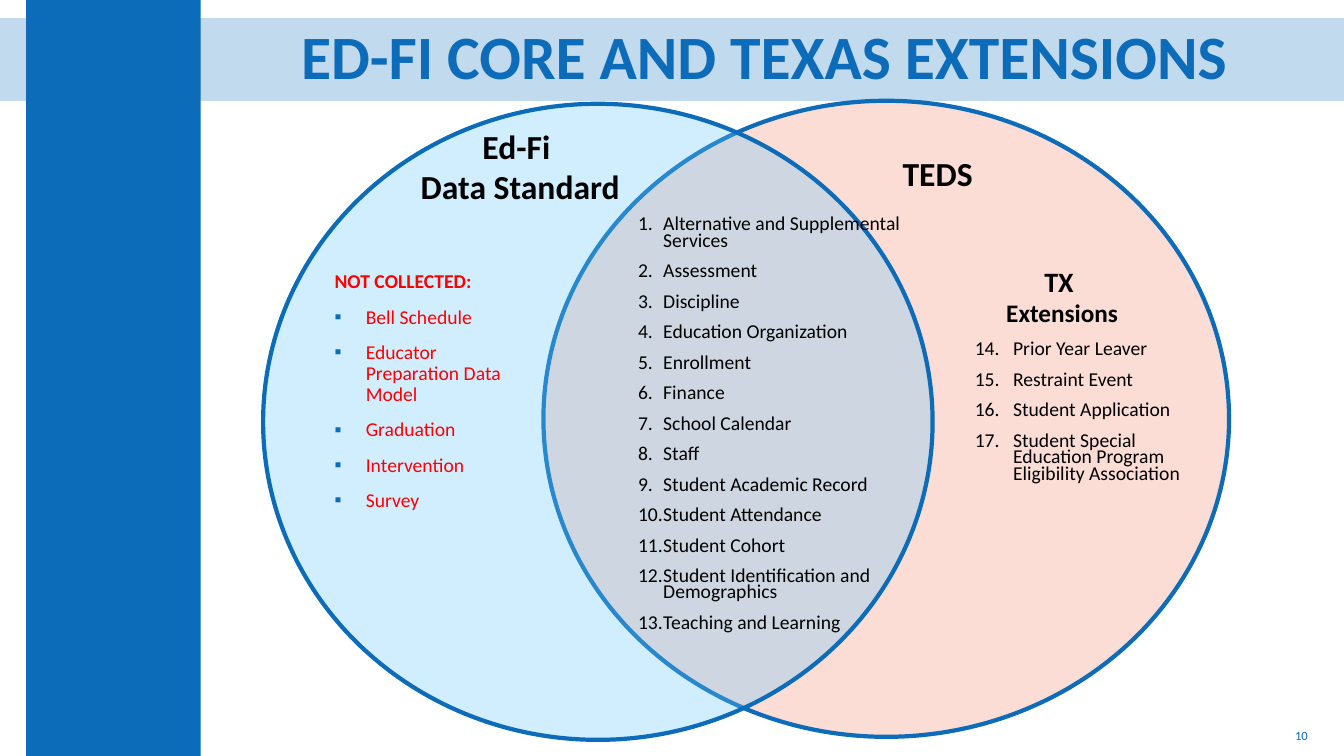
from pptx import Presentation
from pptx.dml.color import RGBColor
from pptx.enum.shapes import MSO_SHAPE
from pptx.enum.text import MSO_ANCHOR, MSO_AUTO_SIZE, PP_ALIGN
from pptx.oxml.ns import qn
from pptx.util import Inches, Pt
from lxml.etree import SubElement

BLUE, BLACK, RED = "0D6CB9", "000000", "FF0000"


def paint(color, code):
    color.rgb = RGBColor.from_string(code)


def mark(para, indent, color, char=None, start=1):
    """Give a paragraph a hanging bullet, or a number when char is None."""
    props = para._p.get_or_add_pPr()
    props.set("marL", str(Inches(indent)))
    props.set("indent", str(-Inches(indent)))
    tint = SubElement(props, qn("a:buClr"))
    SubElement(tint, qn("a:srgbClr"), val=color)
    if char:
        SubElement(props, qn("a:buFont"), typeface="Calibri")
        SubElement(props, qn("a:buChar"), char=char)
    else:
        SubElement(props, qn("a:buFont"), typeface="+mj-lt")
        SubElement(props, qn("a:buAutoNum"), type="arabicPeriod",
                   startAt=str(start))


def write(para, text, size=14, color=BLACK, bold=False, align=PP_ALIGN.LEFT,
          line=None, space=0, bullet=None):
    if bullet:
        mark(para, **bullet)
    para.alignment = align
    if line:
        para.line_spacing = line
    para.space_before = Pt(space)
    run = para.add_run()
    run.text = text
    font = run.font
    font.name, font.size, font.bold = "Calibri", Pt(size), bold
    paint(font.color, color)


class Deck:
    def __init__(self):
        self.file = Presentation()
        self.file.slide_width = Inches(13.33)
        self.file.slide_height = Inches(7.5)
        self.slide = self.file.slides.add_slide(self.file.slide_layouts[5])
        self.shapes = self.slide.shapes

    def shape(self, kind, box, fill, alpha=100, line=None):
        item = self.shapes.add_shape(kind, *map(Inches, box))
        item.shadow.inherit = False
        item.fill.solid()
        paint(item.fill.fore_color, fill)
        if alpha < 100:
            tint = item.fill._xPr.find(qn("a:solidFill"))[0]
            SubElement(tint, qn("a:alpha"), val=str(alpha * 1000))
        if line:
            paint(item.line.color, line)
            item.line.width = Pt(3)
        else:
            item.line.fill.background()

    def title(self, box, text):
        item = self.shapes.title
        item.left, item.top, item.width, item.height = map(Inches, box)
        frame = item.text_frame
        frame.auto_size = MSO_AUTO_SIZE.NONE
        frame.vertical_anchor = MSO_ANCHOR.MIDDLE
        write(frame.paragraphs[0], text, size=44, color=BLUE, bold=True,
              align=PP_ALIGN.CENTER, line=0.9)
        # Bring the title in front of the band
        self.shapes._spTree.append(item._element)

    def text(self, box, rows, anchor=MSO_ANCHOR.TOP, right=0.1, grow=True,
             space=0, **style):
        """Each row is a text and a dict of its own format."""
        frame = self.shapes.add_textbox(*map(Inches, box)).text_frame
        frame.word_wrap = True
        frame.margin_right = Inches(right)
        frame.vertical_anchor = anchor
        if grow:
            frame.auto_size = MSO_AUTO_SIZE.SHAPE_TO_FIT_TEXT
        for i, (text, own) in enumerate(rows):
            para = frame.add_paragraph() if i else frame.paragraphs[0]
            write(para, text, space=space if i else 0, **{**style, **own})

    def head(self, box, *rows):
        self.text(box, [(text, {"size": size}) for text, size in rows],
                  bold=True, align=PP_ALIGN.CENTER)

    def count(self, box, items, indent, start=1, **style):
        bullet = {"indent": indent, "color": BLACK, "start": start}
        self.text(box, [(item, {}) for item in items], bullet=bullet,
                  line=0.7, space=10, **style)


def main():
    deck = Deck()

    # Band and side bar
    deck.shape(MSO_SHAPE.RECTANGLE, (0, 0.18, 13.33, 0.82), BLUE, alpha=25)
    deck.shape(MSO_SHAPE.RECTANGLE, (0.26, 0, 1.73, 7.5), BLUE)

    # Venn circles
    deck.shape(MSO_SHAPE.OVAL, (5.39, 1, 6.8, 6.31), "F9BFAF", 52, BLUE)
    deck.shape(MSO_SHAPE.OVAL, (2.61, 1.03, 6.64, 6.31), "69CAFF", 30, BLUE)

    # Title and headings
    deck.title((2.23, 0.18, 10.71, 0.82), "ED-FI CORE AND TEXAS EXTENSIONS")
    deck.head((3.61, 1.2, 3.1, 0.91), ("Ed-Fi ", 24), ("Data Standard", 24))
    deck.head((7.95, 1.47, 2.7, 0.5), ("TEDS", 24))
    deck.head((9.47, 2.57, 2.13, 0.74), ("TX ", 20), ("Extensions", 18))

    # Left: not collected
    square = {"bullet": {"indent": 0.31, "color": BLUE, "char": "▪"}}
    skipped = ["Bell Schedule", "Educator Preparation Data Model",
               "Graduation", "Intervention", "Survey"]
    deck.text((3.22, 2.65, 2.17, 2.5),
              [("NOT COLLECTED:", {"bold": True})]
              + [(item, square) for item in skipped],
              color=RED, line=0.9, space=10)

    # Right: Texas extensions
    deck.count((9.57, 3.35, 2.27, 1.52), [
        "Prior Year Leaver", "Restraint Event", "Student Application",
        "Student Special Education Program Eligibility Association",
    ], 0.38, start=14)

    # Middle: shared domains
    deck.count((6.23, 2.11, 2.7, 4.27), [
        "Alternative and Supplemental Services", "Assessment", "Discipline",
        "Education Organization", "Enrollment", "Finance", "School Calendar",
        "Staff", "Student Academic Record", "Student Attendance",
        "Student Cohort", "Student Identification and Demographics",
        "Teaching and Learning",
    ], 0.25, right=0)

    # Page number
    deck.text((10.07, 7.1, 3, 0.4), [("10", {})], size=9, color=BLUE,
              align=PP_ALIGN.RIGHT, anchor=MSO_ANCHOR.MIDDLE, grow=False)

    deck.file.save("out.pptx")


if __name__ == "__main__":
    main()
